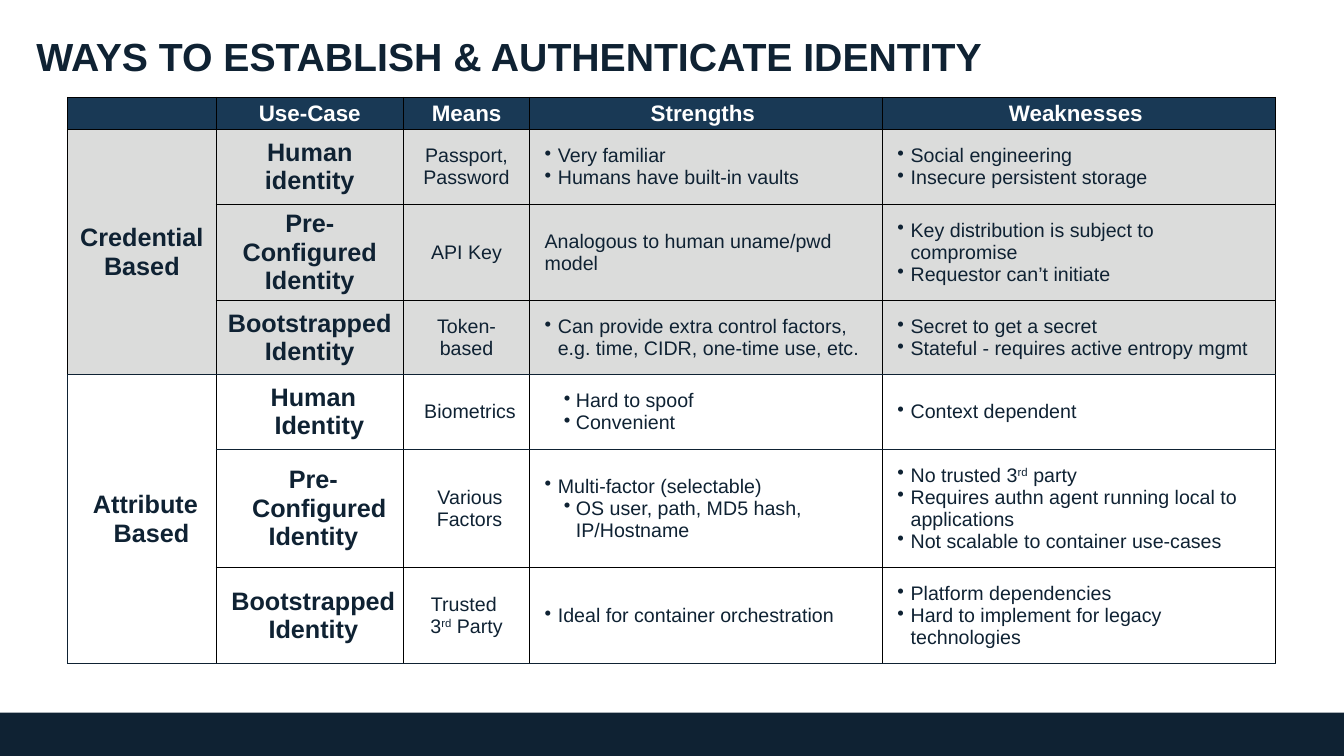
from dataclasses import dataclass

from lxml.etree import SubElement
from pptx import Presentation
from pptx.dml.color import RGBColor
from pptx.enum.shapes import MSO_SHAPE
from pptx.enum.text import MSO_ANCHOR, MSO_AUTO_SIZE, PP_ALIGN
from pptx.oxml.ns import qn
from pptx.slide import Slide
from pptx.util import Pt

NAVY, HEADER, GREY, WHITE, BLACK = "0F2233", "193955", "DBDCDB", "FFFFFF", "000000"
COLUMN_WIDTHS = [105.9, 134, 90, 252, 280.8]
ROW_HEIGHTS = [22.3, 51.1, 51.1, 51.1, 51.1, 82.1, 51.8]
BULLET, SUB_BULLET = (9.4, -9.4), (22.3, -8.6)
LABEL_INDENT, MEANS_INDENT = (13.7, -8.6), (4.3, 0.7)

ROWS = [
    [[], ["Use-Case"], ["Means"], ["Strengths "], ["Weaknesses "]],
    [["Credential Based"], ["Human identity"], ["Passport, Password"],
     ["• Very familiar", "• Humans have built-in vaults"],
     ["• Social engineering", "• Insecure persistent storage"]],
    [[], ["Pre-Configured", "Identity"], ["API Key"],
     ["Analogous to human uname/pwd model"],
     ["• Key distribution is subject to compromise", "• Requestor can’t initiate"]],
    [[], ["Bootstrapped Identity"], ["Token-based"],
     ["• Can provide extra control factors, e.g. time, CIDR, one-time use, etc."],
     ["• Secret to get a secret", "• Stateful - requires active entropy mgmt"]],
    [["Attribute Based"], ["Human Identity"], ["Biometrics"],
     ["•• Hard to spoof", "•• Convenient"],
     ["• Context dependent"]],
    [[], ["Pre-Configured", "Identity"], ["Various Factors"],
     ["• Multi-factor (selectable)", "•• OS user, path, MD5 hash, IP/Hostname"],
     ["• No trusted 3^rd^ party",
      "• Requires authn agent running local to applications",
      "• Not scalable to container use-cases"]],
    [[], ["Bootstrapped", "Identity"], ["Trusted |3^rd^ Party"],
     ["• Ideal for container orchestration"],
     ["• Platform dependencies", "• Hard to implement for legacy technologies"]],
]


def color(value):
    """Turn a hex string into a colour."""
    return RGBColor.from_string(value)


@dataclass
class SlideBuilder:
    """Hold the style and the current slide."""

    slide: Slide
    font_name: str = "Arial"

    def set_font(self, paragraph, size, value, bold):
        """Format a whole paragraph."""
        font = paragraph.font
        font.name, font.size, font.bold = self.font_name, Pt(size), bold
        font.color.rgb = color(value)

    def bar(self, left, top, width, height, fill):
        """Add a plain filled rectangle."""
        shape = self.slide.shapes.add_shape(
            MSO_SHAPE.RECTANGLE, Pt(left), Pt(top), Pt(width), Pt(height))
        shape.shadow.inherit = False
        shape.fill.solid()
        shape.fill.fore_color.rgb = color(fill)
        shape.line.fill.background()

    def title(self, text, left, top, width, height):
        """Place and format the title placeholder."""
        shape = self.slide.shapes.title
        shape.left, shape.top, shape.width, shape.height = map(Pt, (left, top, width, height))
        frame = shape.text_frame
        frame.text = text
        frame.auto_size = MSO_AUTO_SIZE.NONE
        frame.vertical_anchor = MSO_ANCHOR.MIDDLE
        frame.margin_left = frame.margin_top = frame.margin_right = frame.margin_bottom = 0
        paragraph = frame.paragraphs[0]
        paragraph.alignment = PP_ALIGN.LEFT
        paragraph.line_spacing = 0.9
        self.set_font(paragraph, 28, NAVY, True)

    def indent(self, paragraph, margin, first_line, bullet=False):
        """Set the indents and the bullet of a paragraph."""
        properties = paragraph._p.get_or_add_pPr()
        properties.set("marL", str(Pt(margin)))
        properties.set("indent", str(Pt(first_line)))
        if bullet:
            SubElement(properties, qn("a:buChar"), char="•")

    def add_text(self, paragraph, text):
        """Add text where | breaks the line and ^ encloses a superscript."""
        for line_number, line in enumerate(text.split("|")):
            if line_number:
                paragraph.add_line_break()
            for part_number, part in enumerate(line.split("^")):
                run = paragraph.add_run()
                run.text = part
                if part_number % 2:
                    run.font._element.set("baseline", "30000")

    def borders(self, cell, row, column):
        """Draw cell borders, heavier around the attribute section."""
        label = column == 0 and row > 0
        heavy = {
            "L": column == 0 and row >= 4,
            "R": False,
            "T": row in (4, 5),
            "B": row in (3, 4, 6) or label,
        }
        properties = cell._tc.get_or_add_tcPr()
        for position, (side, is_heavy) in enumerate(heavy.items()):
            line = SubElement(properties, qn(f"a:ln{side}"), w=str(Pt(1 if is_heavy else 0.75)))
            fill = SubElement(line, qn("a:solidFill"))
            SubElement(fill, qn("a:srgbClr"), val=NAVY if is_heavy else BLACK)
            properties.insert(position, line)

    def fill_cell(self, cell, row, column, texts):
        """Fill and format one table cell."""
        is_list = row > 0 and column >= 3
        cell.vertical_anchor = MSO_ANCHOR.MIDDLE
        cell.margin_left = cell.margin_right = Pt(10.8 if is_list else 5.4)
        cell.margin_top = cell.margin_bottom = Pt(10.8 if is_list else 2.7)
        cell.fill.solid()
        cell.fill.fore_color.rgb = color(HEADER if row == 0 else GREY if row < 4 else WHITE)
        self.borders(cell, row, column)
        size = 16 if row == 0 else 18 if column < 2 else 14
        for number, text in enumerate(texts or [""]):
            frame = cell.text_frame
            paragraph = frame.add_paragraph() if number else frame.paragraphs[0]
            if text:
                self.add_text(paragraph, text.lstrip("• "))
            if not is_list:
                paragraph.alignment = PP_ALIGN.CENTER
            if text.startswith("•"):
                self.indent(paragraph, *(SUB_BULLET if text.startswith("••") else BULLET), True)
            elif row >= 4 and column < 2:
                self.indent(paragraph, *LABEL_INDENT)
            elif row in (4, 5) and column == 2:
                self.indent(paragraph, *MEANS_INDENT)
            self.set_font(paragraph, size, WHITE if row == 0 else NAVY, row == 0 or column < 2)

    def table(self, rows, left, top):
        """Add the comparison table."""
        table = self.slide.shapes.add_table(
            len(rows), len(COLUMN_WIDTHS), Pt(left), Pt(top),
            Pt(sum(COLUMN_WIDTHS)), Pt(sum(ROW_HEIGHTS))).table
        table.first_row = table.horz_banding = False
        for column, width in zip(table.columns, COLUMN_WIDTHS):
            column.width = Pt(width)
        for row, height in zip(table.rows, ROW_HEIGHTS):
            row.height = Pt(height)
        for row, contents in enumerate(rows):
            for column, texts in enumerate(contents):
                self.fill_cell(table.cell(row, column), row, column, texts)
        for first in (1, 4):
            table.cell(first, 0).merge(table.cell(first + 2, 0))


def main():
    """Build and save the presentation."""
    presentation = Presentation()
    presentation.slide_width, presentation.slide_height = Pt(960), Pt(540)
    builder = SlideBuilder(presentation.slides.add_slide(presentation.slide_layouts[5]))
    builder.bar(0, 509, 960, 31, NAVY)
    builder.title("WAYS TO ESTABLISH & AUTHENTICATE IDENTITY", 26, 25.9, 909.4, 31.7)
    builder.table(ROWS, 48.4, 69.5)
    presentation.save("out.pptx")


if __name__ == "__main__":
    main()
